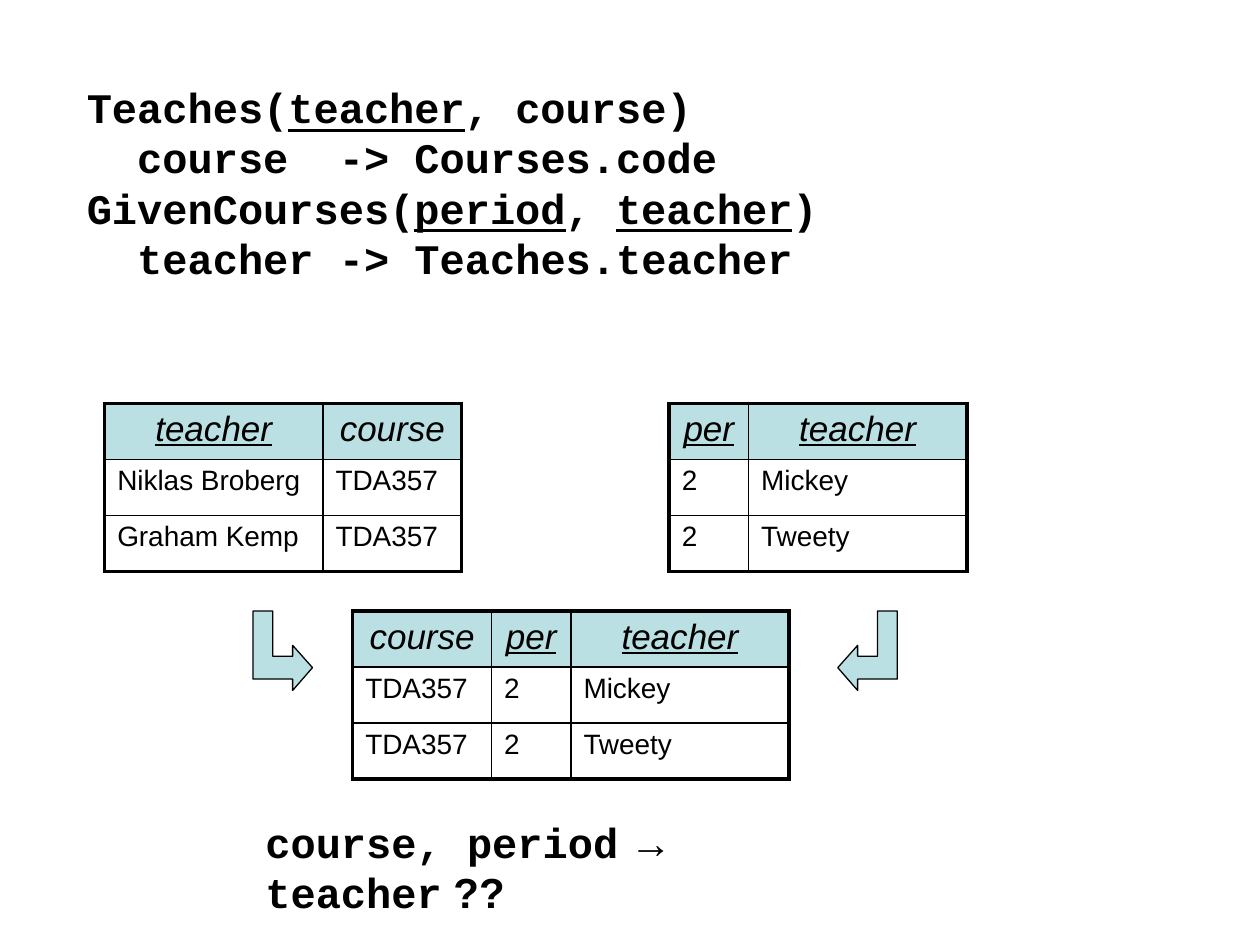
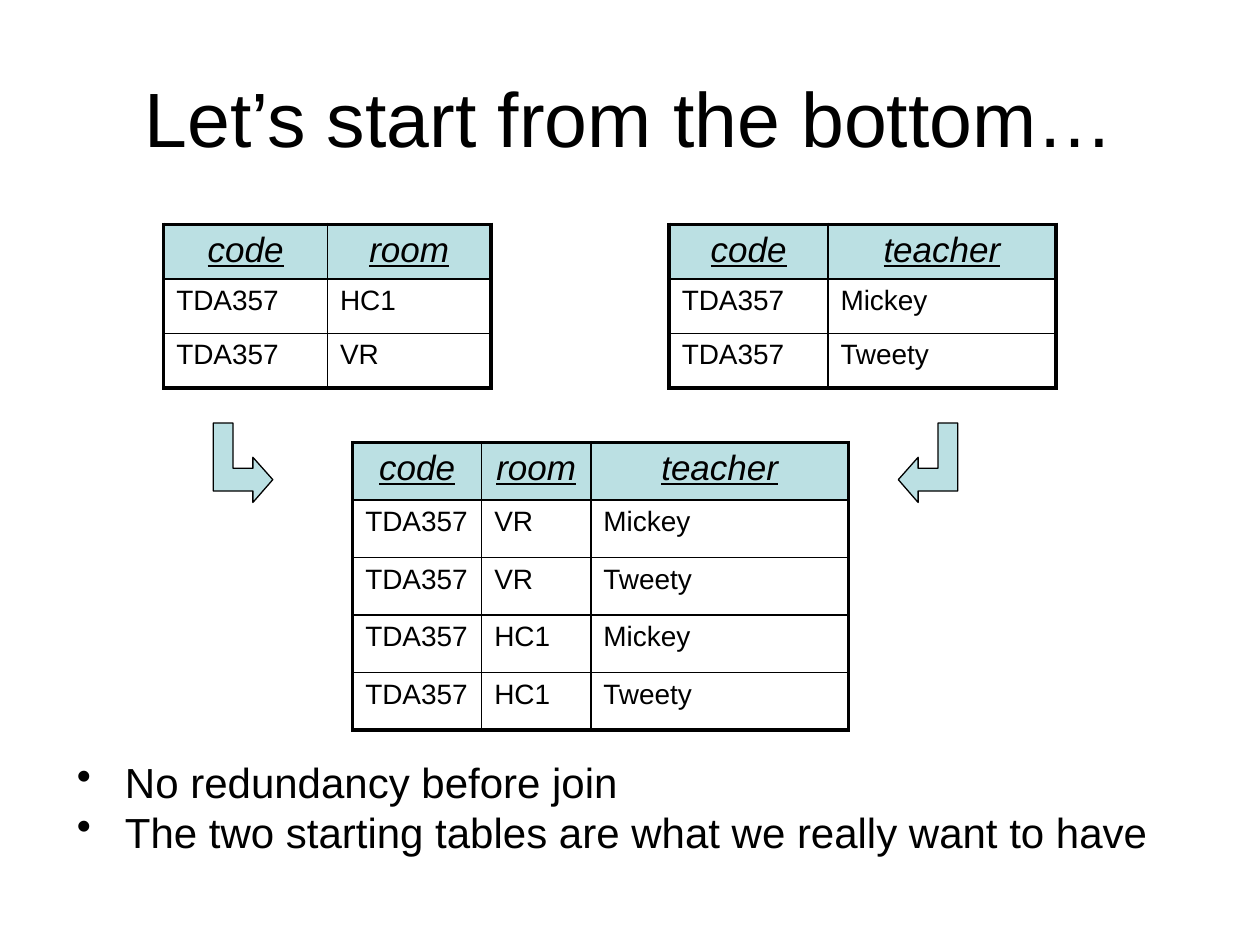
import pptx
import pptx.dml.color
import pptx.enum.text
import pptx.util
from lxml import etree
from pptx.oxml.ns import qn

Cm = pptx.util.Cm
Pt = pptx.util.Pt
PP_ALIGN = pptx.enum.text.PP_ALIGN
MSO_ANCHOR = pptx.enum.text.MSO_ANCHOR

COLORS = {"ink": "000000", "accent": "BBE0E3"}
SANS, MONO = "Arial", "Courier New"
THICK, THIN = Pt(2.25), Pt(1)

# Arrow that goes down and then turns right, in centimetres
ARROW_WIDTH = 1.2
ARROW_OUTLINE = [(1.2, 1.14), (0.8, 0.69), (0.8, 0.91), (0.4, 0.91), (0.4, 0),
                 (0, 0), (0, 1.37), (0.8, 1.37), (0.8, 1.6)]


def color(name):
    return pptx.dml.color.RGBColor.from_string(COLORS[name])


class SlideBuilder:
    """Holds the deck, its style and the slide being filled."""

    def __init__(self):
        self.deck = pptx.Presentation()
        self.deck.slide_width = Cm(25.4)
        self.deck.slide_height = Cm(19.05)
        self.page = None

    def new_page(self):
        self.page = self.deck.slides.add_slide(self.deck.slide_layouts[6])

    def style(self, span, size, font=SANS, **flags):
        span.font.size = Pt(size)
        span.font.name = font
        span.font.color.rgb = color("ink")
        for flag, value in flags.items():
            setattr(span.font, flag, value)

    def write_marked(self, para, text, size, font=SANS, **flags):
        """Write text whose _marked_ parts are underlined."""
        for index, part in enumerate(text.split("_")):
            if part:
                span = para.add_run()
                span.text = part
                self.style(span, size, font, underline=index % 2 == 1, **flags)

    def text_box(self, left, top, width, height):
        box = self.page.shapes.add_textbox(Cm(left), Cm(top), Cm(width), Cm(height))
        box.text_frame.word_wrap = True
        return box.text_frame

    def title(self, text):
        frame = self.text_box(1.27, 0.76, 22.86, 3.18)
        frame.vertical_anchor = MSO_ANCHOR.MIDDLE
        frame.text = text
        frame.paragraphs[0].alignment = PP_ALIGN.CENTER
        self.style(frame.paragraphs[0].runs[0], 44)

    def code(self, left, top, width, height, lines):
        frame = self.text_box(left, top, width, height)
        frame.text = "\n" * (len(lines) - 1)
        for para, line in zip(frame.paragraphs, lines):
            self.write_marked(para, line, 24, MONO, bold=True)

    def dependency(self, left, top, width, height, spans):
        frame = self.text_box(left, top, width, height)
        frame.margin_right = Cm(2.5)
        for text, font, bold in spans:
            span = frame.paragraphs[0].add_run()
            span.text = text
            self.style(span, 24, font, bold=bold)

    def bullets(self, left, top, width, height, items):
        frame = self.text_box(left, top, width, height)
        frame.text = "\n".join(items)
        for para in frame.paragraphs:
            para.line_spacing = 0.8
            para.space_before = Pt(5.5)
            self.style(para.runs[0], 24)
            properties = para._p.get_or_add_pPr()
            properties.set("marL", str(Cm(0.97)))
            properties.set("indent", str(-Cm(0.97)))
            etree.SubElement(properties, qn("a:buChar"), char="•")

    def border(self, cell, side, width):
        properties = cell._tc.get_or_add_tcPr()
        line = etree.SubElement(properties, qn("a:ln" + side), w=str(width))
        fill = etree.SubElement(line, qn("a:solidFill"))
        etree.SubElement(fill, qn("a:srgbClr"), val=COLORS["ink"])

    def table(self, left, top, widths, row_height, rows):
        last_row, last_column = len(rows) - 1, len(widths) - 1
        table = self.page.shapes.add_table(
            len(rows), len(widths), Cm(left), Cm(top),
            Cm(sum(widths)), Cm(row_height * len(rows))).table
        table.first_row = table.horz_banding = False
        for column, width in zip(table.columns, widths):
            column.width = Cm(width)
        for r, row in enumerate(rows):
            table.rows[r].height = Cm(row_height)
            for c, text in enumerate(row):
                cell = table.cell(r, c)
                edges = {"L": c == 0, "R": c == last_column,
                         "T": r == 0, "B": r == last_row}
                for side, outer in edges.items():
                    self.border(cell, side, THICK if outer else THIN)
                para = cell.text_frame.paragraphs[0]
                if r == 0:
                    cell.fill.solid()
                    cell.fill.fore_color.rgb = color("accent")
                    para.alignment = PP_ALIGN.CENTER
                    self.write_marked(para, text, 20, italic=True)
                else:
                    cell.fill.background()
                    para.text = text
                    self.style(para.runs[0], 16)

    def arrow(self, left, top, mirrored=False):
        points = [(Cm(left + (ARROW_WIDTH - x if mirrored else x)), Cm(top + y))
                  for x, y in ARROW_OUTLINE]
        builder = self.page.shapes.build_freeform(*points[0])
        builder.add_line_segments(points[1:], close=True)
        shape = builder.convert_to_shape()
        shape.shadow.inherit = False
        shape.fill.solid()
        shape.fill.fore_color.rgb = color("accent")
        shape.line.color.rgb = color("ink")
        shape.line.width = Pt(0.75)

    def arrow_pair(self, left, right, top):
        self.arrow(left, top)
        self.arrow(right, top, mirrored=True)


def build_dependency_page(slides):
    slides.new_page()
    # Schema
    slides.code(1.5, 1.52, 20.19, 4.32, [
        "Teaches(_teacher_, course)",
        "  course  -> Courses.code",
        "GivenCourses(_period_, _teacher_)",
        "  teacher -> Teaches.teacher",
    ])
    # Starting tables and their join
    slides.table(2.11, 8.13, [4.4, 2.8], 1.13, [
        ["_teacher_", "course"],
        ["Niklas Broberg", "TDA357"],
        ["Graham Kemp", "TDA357"],
    ])
    slides.table(13.49, 8.13, [1.6, 4.4], 1.13, [
        ["_per_", "_teacher_"],
        ["2", "Mickey"],
        ["2", "Tweety"],
    ])
    slides.table(7.11, 12.32, [2.8, 1.6, 4.4], 1.13, [
        ["course", "_per_", "_teacher_"],
        ["TDA357", "2", "Mickey"],
        ["TDA357", "2", "Tweety"],
    ])
    slides.arrow_pair(5.1, 16.89, 12.32)
    # Open question
    slides.dependency(5.1, 16.33, 13.74, 1.27, [
        ("course, period", MONO, True),
        (" → ", SANS, False),
        ("teacher", MONO, True),
        (" ??", SANS, True),
    ])


def build_join_page(slides):
    slides.new_page()
    slides.title("Let’s start from the bottom…")
    slides.bullets(1.3, 15.32, 22.86, 2.08, [
        "No redundancy before join",
        "The two starting tables are what we really want to have",
    ])
    # Starting tables
    rooms, teachers = ["HC1", "VR"], ["Mickey", "Tweety"]
    slides.table(3.3, 4.52, [3.3, 3.3], 1.1,
                 [["_code_", "_room_"]] + [["TDA357", room] for room in rooms])
    slides.table(13.49, 4.52, [3.2, 4.6], 1.1,
                 [["_code_", "_teacher_"]] + [["TDA357", name] for name in teachers])
    slides.arrow_pair(4.3, 18.11, 8.53)
    # Join: every room with every teacher
    slides.table(7.11, 8.92, [2.6, 2.2, 5.2], 1.16,
                 [["_code_", "_room_", "_teacher_"]]
                 + [["TDA357", room, name]
                    for room in reversed(rooms) for name in teachers])


def main():
    slides = SlideBuilder()
    build_dependency_page(slides)
    build_join_page(slides)
    slides.deck.save("out.pptx")


if __name__ == "__main__":
    main()
